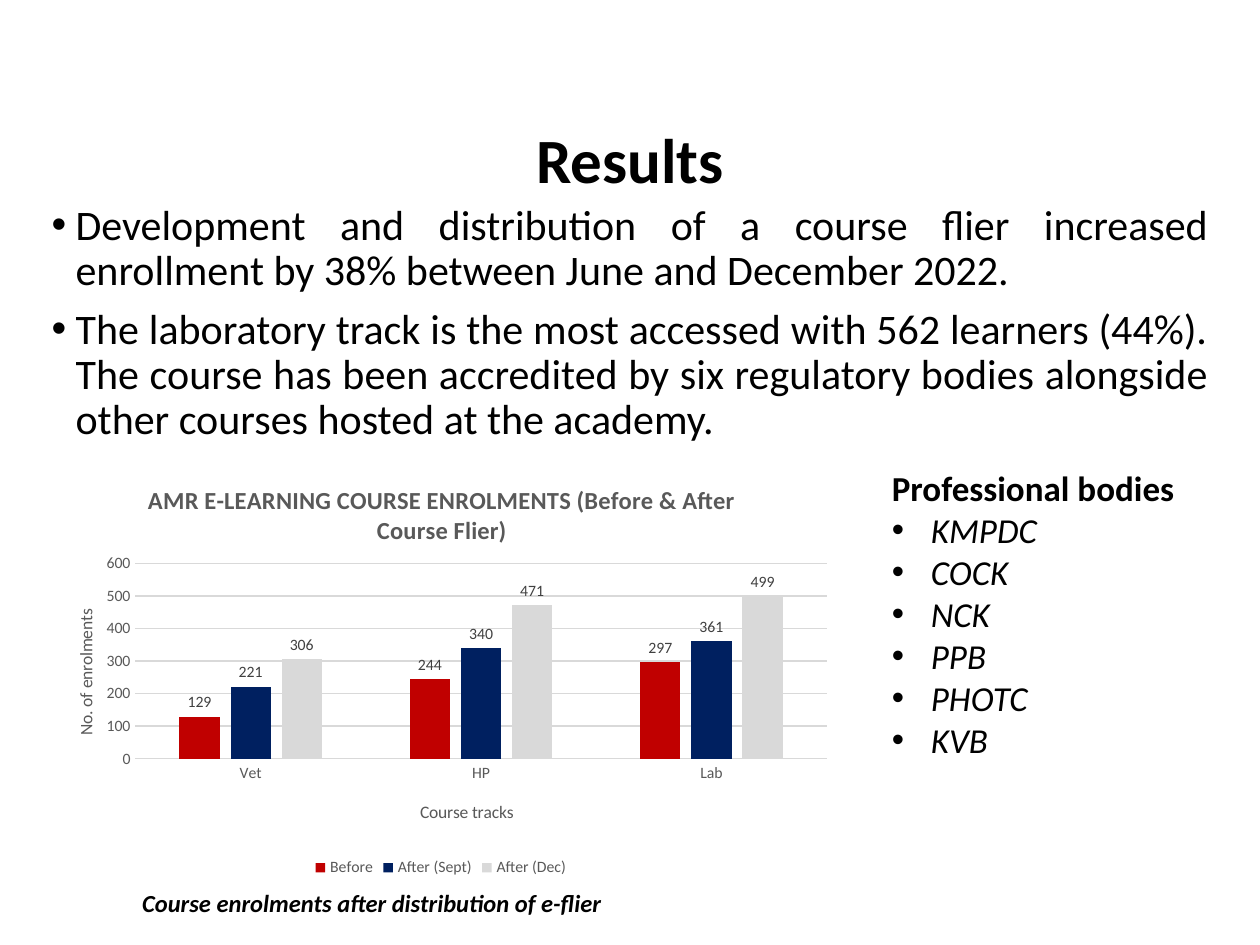
from dataclasses import dataclass

from lxml import etree
from pptx import Presentation
from pptx import util as u
from pptx.chart.data import CategoryChartData
from pptx.dml.color import RGBColor
from pptx.enum import chart as ch
from pptx.enum import text
from pptx.oxml.ns import qn


@dataclass(frozen=True)
class Theme:
    font: str = "Calibri"
    ink: str = "000000"
    axis: str = "595959"
    label: str = "404040"
    rule: str = "D9D9D9"
    series: tuple = ("C00000", "002060", "D9D9D9")
    title: int = 36
    body: int = 24
    aside: int = 20
    caption: int = 14
    axis_title: int = 10
    tick: int = 9


THEME = Theme()
MARGIN = 0.31

POINTS = (
    "Development and distribution of a course flier increased enrollment by 38% "
    "between June and December 2022.",
    "The laboratory track is the most accessed with 562 learners (44%). The course "
    "has been accredited by six regulatory bodies alongside other courses hosted "
    "at the academy.",
)
BODIES = ("KMPDC", "COCK", "NCK", "PPB", "PHOTC", "KVB")
TRACKS = ("Vet", "HP", "Lab")
ENROLMENTS = {
    "Before": (129, 244, 297),
    "After (Sept)": (221, 340, 361),
    "After (Dec)": (306, 471, 499),
}


def style(font, size, color=THEME.ink, bold=False, italic=False):
    font.name, font.size = THEME.font, u.Pt(size)
    font.bold, font.italic = bold, italic
    font.color.rgb = RGBColor.from_string(color)


def add_span(para, words, size, **look):
    span = para.add_run()
    span.text = words
    style(span.font, size, **look)


def add_bullet(para, indent):
    """Give the paragraph a round bullet with a hanging indent in inches."""
    props = para._p.get_or_add_pPr()
    props.set("marL", str(u.Inches(indent)))
    props.set("indent", str(-u.Inches(indent)))
    etree.SubElement(props, qn("a:buFont"), typeface="Arial")
    etree.SubElement(props, qn("a:buChar"), char="•")


def paragraphs(frame, count):
    """Yield the frame's first paragraph, then new ones, up to count."""
    yield frame.paragraphs[0]
    for _ in range(count - 1):
        yield frame.add_paragraph()


def place(shape, left, top, width, height):
    shape.left, shape.top = u.Inches(left), u.Inches(top)
    shape.width, shape.height = u.Inches(width), u.Inches(height)


def fill_title(box, words):
    place(box, 0.69, 0.97, 8.62, 0.65)
    frame = box.text_frame
    frame.auto_size = text.MSO_AUTO_SIZE.NONE
    frame.vertical_anchor = text.MSO_ANCHOR.MIDDLE
    para = frame.paragraphs[0]
    para.alignment, para.line_spacing = text.PP_ALIGN.CENTER, 0.9
    add_span(para, words, THEME.title, bold=True)


def fill_body(box, points):
    place(box, MARGIN, 1.57, 10 - 2 * MARGIN, 2.13)
    frame = box.text_frame
    frame.auto_size = text.MSO_AUTO_SIZE.NONE
    for index, para in enumerate(paragraphs(frame, len(points))):
        para.alignment, para.line_spacing = text.PP_ALIGN.JUSTIFY, 0.9
        para.space_before = u.Pt(7.5 if index else 0)
        add_bullet(para, 0.19)
        add_span(para, points[index], THEME.body)


def add_box(page, *area):
    box = page.shapes.add_textbox(*map(u.Inches, area))
    box.text_frame.word_wrap = True
    box.text_frame.auto_size = text.MSO_AUTO_SIZE.SHAPE_TO_FIT_TEXT
    return box.text_frame


def add_aside(page, heading, items):
    frame = add_box(page, 6.98, 3.65, 3.14, 2.46)
    first, *rest = paragraphs(frame, len(items) + 1)
    add_span(first, heading, THEME.aside, bold=True)
    for para, item in zip(rest, items):
        add_bullet(para, 0.31)
        add_span(para, item, THEME.aside, italic=True)


def set_layout(element, position, **shares):
    """Fix a chart part's place, in shares of the chart's size."""
    for old in element.findall(qn("c:layout")):
        element.remove(old)
    layout = etree.Element(qn("c:layout"))
    manual = etree.SubElement(layout, qn("c:manualLayout"))
    if "w" in shares:
        etree.SubElement(manual, qn("c:layoutTarget"), val="inner")
    for side in ("x", "y"):
        etree.SubElement(manual, qn(f"c:{side}Mode"), val="edge")
    for side, share in shares.items():
        etree.SubElement(manual, qn(f"c:{side}"), val=str(share))
    element.insert(position, layout)


def add_chart_title(owner, words, size, x, y, bold=False):
    """Title a chart or an axis, with its top left corner at x, y."""
    title = owner.chart_title if hasattr(owner, "chart_title") else owner.axis_title
    add_span(title.text_frame.paragraphs[0], words, size, color=THEME.axis, bold=bold)
    set_layout(title._element, 1, x=x, y=y)


def format_line(line):
    line.color.rgb = RGBColor.from_string(THEME.rule)
    line.width = u.Pt(0.75)


def format_axes(chart):
    for axis in (chart.category_axis, chart.value_axis):
        axis.major_tick_mark = axis.minor_tick_mark = ch.XL_TICK_MARK.NONE
        style(axis.tick_labels.font, THEME.tick, THEME.axis)
    format_line(chart.category_axis.format.line)
    chart.value_axis.format.line.fill.background()
    chart.value_axis.minimum_scale, chart.value_axis.maximum_scale = 0, 600
    chart.value_axis.major_unit = 100
    format_line(chart.value_axis.major_gridlines.format.line)


def format_series(plot):
    plot.gap_width, plot.overlap, plot.vary_by_categories = 219, -27, False
    for series, color in zip(plot.series, THEME.series):
        series.format.fill.solid()
        series.format.fill.fore_color.rgb = RGBColor.from_string(color)
        labels = series.data_labels
        labels.show_value = True
        labels.position = ch.XL_LABEL_POSITION.OUTSIDE_END
        style(labels.font, THEME.tick, THEME.label)


def add_enrolment_chart(page):
    data = CategoryChartData()
    data.categories = TRACKS
    for name, values in ENROLMENTS.items():
        data.add_series(name, values)
    area = map(u.Inches, (MARGIN, 3.63, 6.38, 3.37))
    chart = page.shapes.add_chart(ch.XL_CHART_TYPE.COLUMN_CLUSTERED, *area, data).chart
    style(chart.font, THEME.axis_title)
    format_axes(chart)
    format_series(chart.plots[0])
    add_chart_title(chart, "AMR E-LEARNING COURSE ENROLMENTS (Before & After Course Flier)",
                    THEME.caption, 0.13, 0.05, bold=True)
    add_chart_title(chart.category_axis, "Course tracks", THEME.axis_title, 0.47, 0.8)
    add_chart_title(chart.value_axis, "No. of enrolments", THEME.axis_title, 0.04, 0.35)
    chart.has_legend = True
    chart.legend.position = ch.XL_LEGEND_POSITION.BOTTOM
    chart.legend.include_in_layout = False
    style(chart.legend.font, THEME.tick, THEME.axis)
    plot_area = chart._chartSpace.find(f".//{qn('c:plotArea')}")
    set_layout(plot_area, 0, x=0.12, y=0.25, w=0.86, h=0.46)


def main():
    deck = Presentation()
    deck.slide_width, deck.slide_height = u.Inches(10), u.Inches(7.5)
    page = deck.slides.add_slide(deck.slide_layouts[1])
    fill_title(page.shapes.title, "Results")
    fill_body(page.placeholders[1], POINTS)
    add_aside(page, "Professional bodies", BODIES)
    add_enrolment_chart(page)
    caption = add_box(page, 1.03, 7, 4.36, 0.34).paragraphs[0]
    add_span(caption, "Course enrolments after distribution of e-flier",
             THEME.caption, bold=True, italic=True)
    deck.save("out.pptx")


if __name__ == "__main__":
    main()
